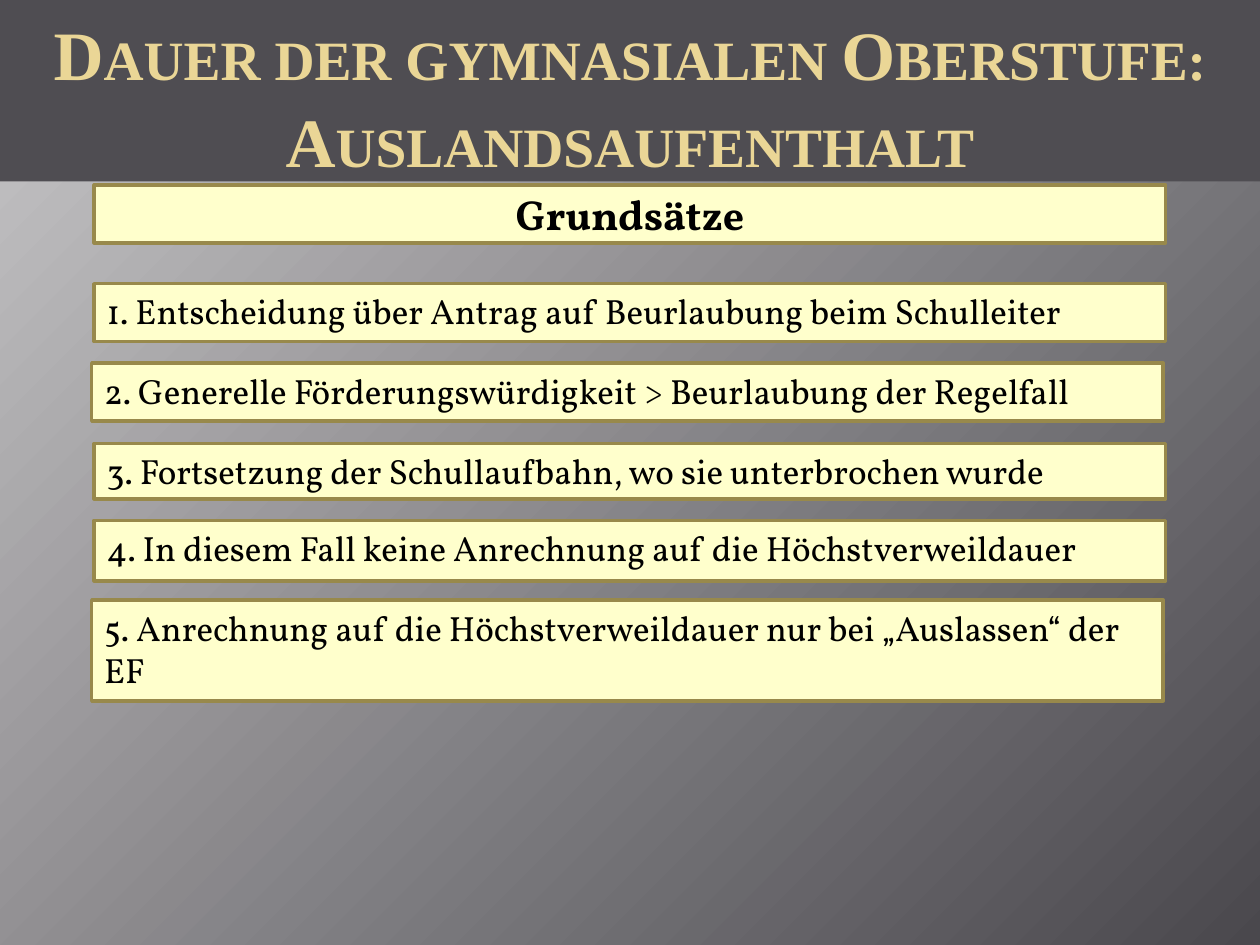
import pptx
import pptx.util
import pptx.dml.color
import pptx.enum.shapes
import pptx.enum.text
import pptx.oxml

Cm = pptx.util.Cm
Pt = pptx.util.Pt
RGBColor = pptx.dml.color.RGBColor
ALIGN = pptx.enum.text.PP_ALIGN
ANCHOR = pptx.enum.text.MSO_ANCHOR

BG_LIGHT = RGBColor(0xC7, 0xC6, 0xC8)
BG_DARK = RGBColor(0x4A, 0x48, 0x4D)
BAND = RGBColor(0x4F, 0x4D, 0x52)
GOLD = RGBColor(0xEA, 0xD6, 0x96)
CREAM = RGBColor(0xFF, 0xFF, 0xCC)
BORDER = RGBColor(0x98, 0x89, 0x4B)
BLACK = RGBColor(0, 0, 0)


def add_box(left, top, width, height, fill, anchor, align):
    sp = s.shapes.add_shape(pptx.enum.shapes.MSO_SHAPE.RECTANGLE,
                            Cm(left), Cm(top), Cm(width), Cm(height))
    sp.shadow.inherit = False
    sp.fill.solid()
    sp.fill.fore_color.rgb = fill
    sp.line.fill.background()
    tf = sp.text_frame
    tf.word_wrap = True
    tf.vertical_anchor = anchor
    tf.paragraphs[0].alignment = align
    return sp


def add_run(p, text, font, size, color, bold=False):
    r = p.add_run()
    r.text = text
    r.font.name = font
    r.font.size = Pt(size)
    r.font.bold = bold
    r.font.color.rgb = color
    return r


prs = pptx.Presentation()
prs.slide_width = Cm(25.4)
prs.slide_height = Cm(19.05)
s = prs.slides.add_slide(prs.slide_layouts[6])

# Background: gradient spreading from the top left corner
bg = s.background.fill
bg.gradient()
for stop, color, position in zip(bg.gradient_stops, (BG_LIGHT, BG_DARK), (0, 1)):
    stop.color.rgb = color
    stop.position = position
lin = s.background._cSld.find(".//" + pptx.oxml.ns.qn("a:lin"))
lin.getparent().replace(lin, pptx.oxml.parse_xml(
    '<a:path xmlns:a="http://schemas.openxmlformats.org/drawingml/2006/main" '
    'path="circle"><a:fillToRect r="100000" b="100000"/></a:path>'))

# Title band
sp = add_box(0, 0, 25.4, 3.66, BAND, ANCHOR.MIDDLE, ALIGN.CENTER)
tf = sp.text_frame
tf.margin_left = tf.margin_right = Cm(0.13)
tf.margin_top, tf.margin_bottom = Cm(0.15), 0
p = tf.paragraphs[0]
p.line_spacing = 1.04
for i, text in enumerate(("Dauer der gymnasialen Oberstufe:", "Auslandsaufenthalt")):
    if i:
        p.add_line_break()
    r = add_run(p, text, "Times New Roman", 39.6, GOLD, True)
    r.font._element.set("cap", "small")

# Heading and numbered principles: left, top, height, text
boxes = [
    (1.9, 3.73, 1.17, "Grundsätze"),
    (1.9, 5.72, 1.17, "1. Entscheidung über Antrag auf Beurlaubung beim Schulleiter"),
    (1.85, 7.32, 1.17, "2. Generelle Förderungswürdigkeit > Beurlaubung der Regelfall"),
    (1.9, 8.94, 1.12, "3. Fortsetzung der Schullaufbahn, wo sie unterbrochen wurde"),
    (1.9, 10.49, 1.22, "4. In diesem Fall keine Anrechnung auf die Höchstverweildauer"),
    (1.85, 12.1, 2.03, "5. Anrechnung auf die Höchstverweildauer nur bei „Auslassen“ der EF"),
]
for i, (left, top, height, text) in enumerate(boxes):
    heading = i == 0
    sp = add_box(left, top, 21.6, height, CREAM,
                 ANCHOR.MIDDLE if heading else ANCHOR.TOP,
                 ALIGN.CENTER if heading else ALIGN.LEFT)
    sp.line.color.rgb = BORDER
    sp.line.width = Pt(2)
    add_run(sp.text_frame.paragraphs[0], text, "Vollkorn",
            24 if heading else 20, BLACK, heading)

prs.save("out.pptx")
